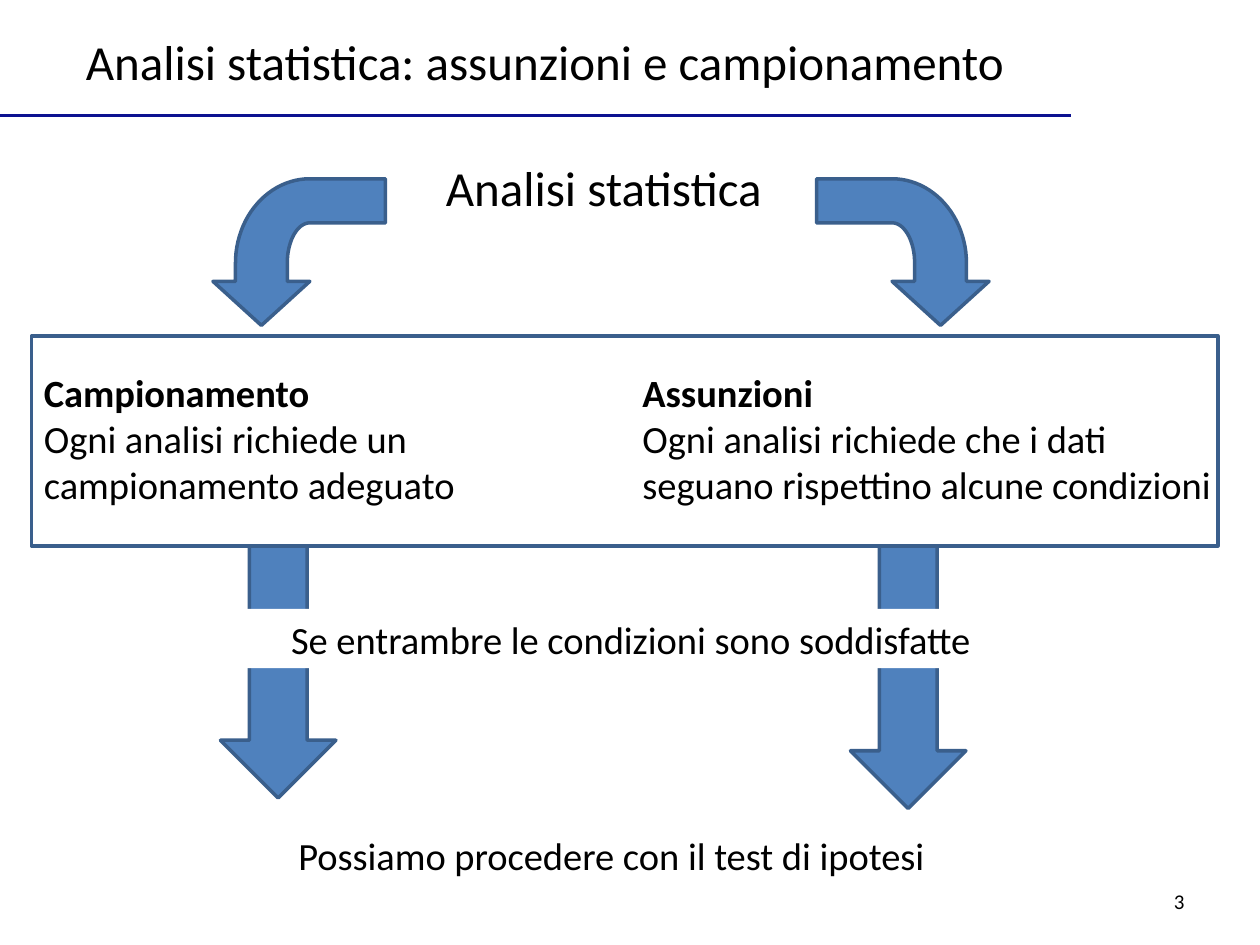
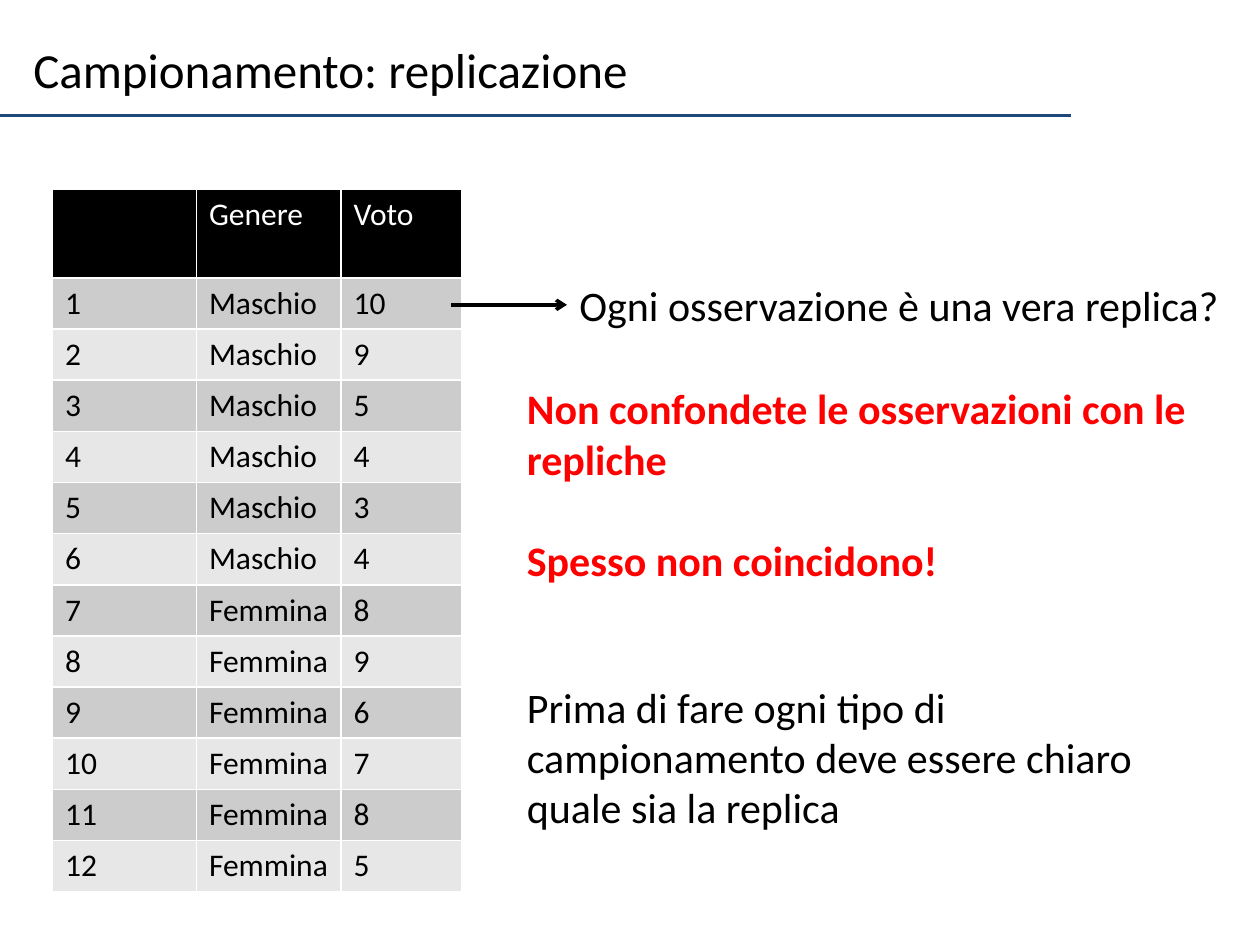
from dataclasses import dataclass
from math import cos, pi, sin

from lxml.etree import SubElement
from pptx import Presentation
from pptx.dml.color import RGBColor
from pptx.enum.shapes import MSO_CONNECTOR as Connector, MSO_SHAPE as Preset
from pptx.enum.text import MSO_ANCHOR as Anchor, PP_ALIGN as Align
from pptx.oxml import parse_xml
from pptx.oxml.ns import nsdecls, qn
from pptx.util import Pt

FONT = "Calibri"
BLACK, WHITE, RED = "000000", "FFFFFF", "FF0000"
ARROW_FILL, OUTLINE = "4F81BD", "3A5F8C"
BAND_FILLS = ("E7E7E7", "CCCCCC")
LINE_WIDTH = 2
TITLE_SIZE, BODY_SIZE, CALLOUT_SIZE = 28, 22, 24
COLUMN_WIDTHS = (82.3, 82.6, 69.1)
HEADER_HEIGHT, ROW_HEIGHT = 50.8, 29.25
CELL_RIGHT_MARGIN = 4
GRADES = (10, 9, 5, 4, 3, 4, 8, 9, 6, 7, 8, 5)
MIRROR_SUM = 686.9


@dataclass(frozen=True)
class Frame:
    left: float
    top: float
    width: float
    height: float

    def lengths(self) -> tuple:
        return Pt(self.left), Pt(self.top), Pt(self.width), Pt(self.height)


@dataclass(frozen=True)
class Line:
    text: str
    bold: bool = False
    gap: float = 0


DOWN_ARROWS = (Frame(126, 312, 66, 144), Frame(486, 312, 66, 150))


def color(value: str) -> RGBColor:
    return RGBColor.from_string(value)


def write_text(text_frame, lines, size=BODY_SIZE, ink=BLACK, align=Align.LEFT) -> None:
    for index, line in enumerate(lines):
        para = text_frame.paragraphs[0] if index == 0 else text_frame.add_paragraph()
        para.alignment = align
        para.space_before = Pt(line.gap)
        span = para.add_run()
        span.text = line.text
        span.font.name = FONT
        span.font.size = Pt(size)
        span.font.bold = line.bold
        span.font.color.rgb = color(ink)


def add_text(page, frame: Frame, *lines: Line, wrap=True, **text_format):
    box = page.shapes.add_textbox(*frame.lengths())
    box.text_frame.word_wrap = wrap
    box.text_frame.vertical_anchor = Anchor.MIDDLE
    write_text(box.text_frame, lines, **text_format)
    return box


def paint(shape, fill=None, outline=None) -> None:
    shape.shadow.inherit = False
    if fill:
        shape.fill.solid()
        shape.fill.fore_color.rgb = color(fill)
    else:
        shape.fill.background()
    if outline:
        shape.line.color.rgb = color(outline)
        shape.line.width = Pt(LINE_WIDTH)
    else:
        shape.line.fill.background()


def add_shape(page, preset, frame: Frame, fill=None, outline=None):
    shape = page.shapes.add_shape(preset, *frame.lengths())
    paint(shape, fill, outline)
    return shape


def add_line(page, start: tuple, end: tuple, ink: str, arrow=False):
    x1, y1, x2, y2 = (Pt(value) for value in start + end)
    line = page.shapes.add_connector(Connector.STRAIGHT, x1, y1, x2, y2)
    line.line.color.rgb = color(ink)
    line.line.width = Pt(LINE_WIDTH)
    if arrow:
        SubElement(line.line._get_or_add_ln(), qn("a:tailEnd"), type="arrow")
    SubElement(line._element.spPr, qn("a:effectLst"))
    return line


def add_page(deck, title: str, title_frame: Frame, rule_ink: str):
    page = deck.slides.add_slide(deck.slide_layouts[6])
    add_text(page, title_frame, Line(title), wrap=False, size=TITLE_SIZE)
    add_line(page, (0, 66), (612, 66), rule_ink)
    return page


def quarter_arc(center: tuple, radii: tuple, start: float, end: float, steps=24) -> list:
    angles = [start + (end - start) * step / steps for step in range(steps + 1)]
    return [(center[0] + radii[0] * cos(a), center[1] - radii[1] * sin(a)) for a in angles]


def add_bent_arrow(page, mirrored: bool) -> None:
    bend = (509.8, 150.5)
    points = [(537.5, 186), (565.2, 160.8), (552.3, 160.8)]
    points += quarter_arc(bend, (42.5, 48.3), 0, pi / 2)
    points += [(466.6, 102.2), (466.6, 127.4)]
    points += quarter_arc(bend, (12.9, 23.1), pi / 2, 0)
    points += [(522.7, 160.8), (509.8, 160.8)]
    if mirrored:
        points = [(MIRROR_SUM - x, y) for x, y in points]
    corners = [(Pt(x), Pt(y)) for x, y in points]
    builder = page.shapes.build_freeform(*corners[0])
    builder.add_line_segments(corners[1:], close=True)
    paint(builder.convert_to_shape(), ARROW_FILL, OUTLINE)


def add_borders(cell) -> None:
    for index, side in enumerate(("lnL", "lnR", "lnT", "lnB")):
        border = parse_xml(
            f'<a:{side} {nsdecls("a")} w="{Pt(1)}"><a:solidFill>'
            f'<a:srgbClr val="{WHITE}"/></a:solidFill></a:{side}>'
        )
        cell._tc.get_or_add_tcPr().insert(index, border)


def add_grades_table(page) -> None:
    rows = [("", "Genere", "Voto")]
    for number, grade in enumerate(GRADES, start=1):
        rows.append((str(number), "Maschio" if number <= 6 else "Femmina", str(grade)))
    frame = Frame(30, 108, sum(COLUMN_WIDTHS), HEADER_HEIGHT + ROW_HEIGHT * len(GRADES))
    table = page.shapes.add_table(len(rows), len(COLUMN_WIDTHS), *frame.lengths()).table
    table.first_row = table.horz_banding = False
    for column, width in zip(table.columns, COLUMN_WIDTHS):
        column.width = Pt(width)
    for row_index, values in enumerate(rows):
        header = row_index == 0
        table.rows[row_index].height = Pt(HEADER_HEIGHT if header else ROW_HEIGHT)
        for column_index, value in enumerate(values):
            cell = table.cell(row_index, column_index)
            cell.margin_right = Pt(CELL_RIGHT_MARGIN)
            cell.fill.solid()
            cell.fill.fore_color.rgb = color(BLACK if header else BAND_FILLS[row_index % 2])
            add_borders(cell)
            if value:
                write_text(cell.text_frame, [Line(value)], size=18, ink=WHITE if header else BLACK)


def build_assumptions(deck) -> None:
    page = add_page(deck, "Analisi statistica: assunzioni e campionamento",
                    Frame(42, 14.4, 566.4, 41.2), "0C1290")
    for frame in DOWN_ARROWS:
        add_shape(page, Preset.DOWN_ARROW, frame, ARROW_FILL, OUTLINE)
    add_text(page, Frame(516, 500.4, 168, 28.8), Line("3"), size=12, align=Align.RIGHT)
    add_text(page, Frame(72, 86.4, 546, 41.2), Line("Analisi statistica"),
             size=TITLE_SIZE, align=Align.CENTER)
    add_text(page, Frame(18, 206.6, 324, 87.4), Line("Campionamento", bold=True),
             Line("Ogni analisi richiede un campionamento adeguato"))
    add_text(page, Frame(360, 206.6, 342, 87.4), Line("Assunzioni", bold=True),
             Line("Ogni analisi richiede che i dati seguano rispettino alcune condizioni"))
    add_text(page, Frame(163.4, 471.6, 376.6, 33.9),
             Line("Possiamo procedere con il test di ipotesi"), wrap=False)
    for mirrored in (False, True):
        add_bent_arrow(page, mirrored)
    band = add_shape(page, Preset.RECTANGLE, Frame(90, 348, 546, 33.9), WHITE)
    band.text_frame.word_wrap = True
    band.text_frame.vertical_anchor = Anchor.MIDDLE
    write_text(band.text_frame, [Line("Se entrambre le condizioni sono soddisfatte ")],
               align=Align.CENTER)
    add_shape(page, Preset.RECTANGLE, Frame(18, 192, 678, 120), outline=OUTLINE)


def build_replication(deck) -> None:
    page = add_page(deck, "Campionamento: replicazione", Frame(12, 18.7, 362.9, 41.2), "1F497D")
    add_grades_table(page)
    question = add_text(page, Frame(324, 156, 383.8, 36.4),
                        Line("Ogni osservazione è una vera replica?"),
                        wrap=False, size=CALLOUT_SIZE)
    pointer = add_line(page, (258, 174.2), (324, 174.2), BLACK, arrow=True)
    pointer.end_connect(question, 1)
    add_text(page, Frame(294, 214.6, 426, 123.8),
             Line("Non confondete le osservazioni con le repliche", bold=True),
             Line("Spesso non coincidono!", bold=True, gap=29.3),
             size=CALLOUT_SIZE, ink=RED)
    add_text(page, Frame(294, 385.2, 390, 94.3),
             Line("Prima di fare ogni tipo di campionamento deve essere chiaro "
                  "quale sia la replica"), size=CALLOUT_SIZE)


def main() -> None:
    deck = Presentation()
    deck.slide_width, deck.slide_height = Pt(720), Pt(540)
    build_assumptions(deck)
    build_replication(deck)
    deck.save("out.pptx")


if __name__ == "__main__":
    main()
